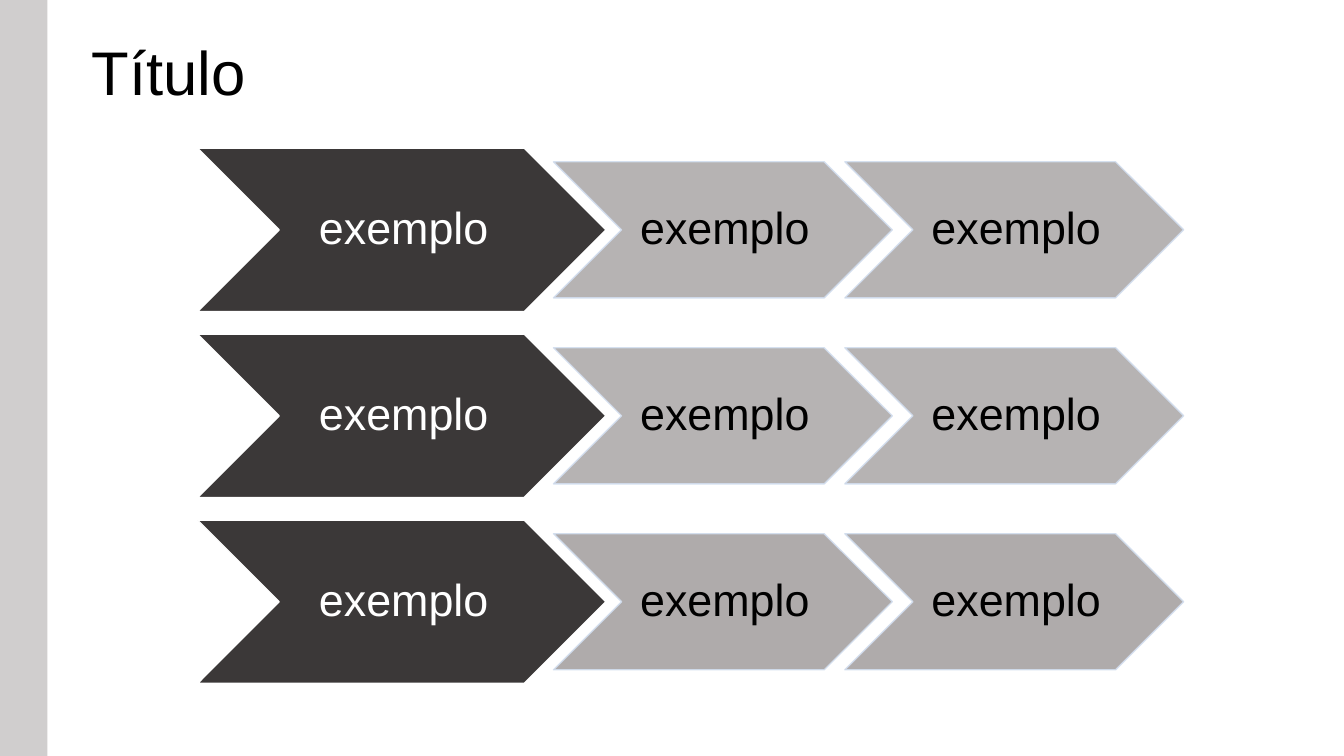
import pptx
import pptx.dml.color
import pptx.enum.shapes
import pptx.enum.text
import pptx.oxml
import pptx.oxml.ns
import pptx.util
from pptx.util import Inches

FONT = "Arial"
ROW_TOPS = 1.47
ROW_PITCH = 1.845


def rgb(value):
    return pptx.dml.color.RGBColor.from_string(value)


def set_opacity(fill, percent):
    """Make a solid fill, of a shape or of a line, partly transparent."""
    color = fill._xPr.find(".//" + pptx.oxml.ns.qn("a:srgbClr"))
    alpha = color.makeelement(pptx.oxml.ns.qn("a:alpha"), {"val": str(percent * 1000)})
    color.append(alpha)


def write(tf, text, size, color, align):
    tf.word_wrap = True
    tf.vertical_anchor = pptx.enum.text.MSO_ANCHOR.MIDDLE
    p = tf.paragraphs[0]
    p.alignment = align
    p.line_spacing = 0.9
    r = p.add_run()
    r.text = text
    r.font.name = FONT
    r.font.size = pptx.util.Pt(size)
    r.font.color.rgb = rgb(color)


def add_title(slide, left, top, width, height):
    sp = slide.shapes.title
    sp.left, sp.top = Inches(left), Inches(top)
    sp.width, sp.height = Inches(width), Inches(height)
    write(sp.text_frame, "Título", 44, "000000", pptx.enum.text.PP_ALIGN.LEFT)


def add_side_bar(slide, left, top, width, height):
    sp = slide.shapes.add_shape(pptx.enum.shapes.MSO_SHAPE.RECTANGLE, Inches(left),
                                Inches(top), Inches(width), Inches(height))
    sp.shadow.inherit = False
    sp.fill.solid()
    sp.fill.fore_color.rgb = rgb("D0CECE")
    sp.line.fill.background()


def add_chevron(shapes, left, top, width, height, fill, line, color):
    sp = shapes.add_shape(pptx.enum.shapes.MSO_SHAPE.CHEVRON, Inches(left),
                          Inches(top), Inches(width), Inches(height))
    sp.shadow.inherit = False
    sp.fill.solid()
    sp.fill.fore_color.rgb = rgb(fill)
    sp.line.color.rgb = rgb(line)
    sp.line.width = pptx.util.Pt(1)
    tf = sp.text_frame
    tf.margin_left, tf.margin_right = Inches(0.04), 0
    tf.margin_top = tf.margin_bottom = Inches(0.02)
    write(tf, "exemplo", 32, color, pptx.enum.text.PP_ALIGN.CENTER)
    return sp


def add_process_row(shapes, left, top, height, step_opacity):
    """Place a dark lead chevron and two smaller grey steps centred on it."""
    add_chevron(shapes, left, top, 4.05, height, "3B3838", "FFFFFF", "FFFFFF")
    step_height = 1.35
    for i in range(2):
        sp = add_chevron(shapes, left + 3.53 + i * 2.89, top + (height - step_height) / 2,
                         3.36, step_height, "AFABAB", "D2DEEF", "000000")
        set_opacity(sp.line.fill, 90)
        if step_opacity < 100:
            set_opacity(sp.fill, step_opacity)


def main():
    prs = pptx.Presentation()
    prs.slide_width, prs.slide_height = Inches(13.33), Inches(7.5)
    slide = prs.slides.add_slide(prs.slide_layouts[5])
    add_title(slide, 0.81, 0.02, 10.6, 1.45)
    shapes = slide.shapes.add_group_shape().shapes
    for i, opacity in enumerate((90, 90, 100)):
        add_process_row(shapes, 1.96, ROW_TOPS + i * ROW_PITCH, 1.62, opacity)
    add_side_bar(slide, 0, 0, 0.47, 7.5)
    prs.save("out.pptx")


if __name__ == "__main__":
    main()
